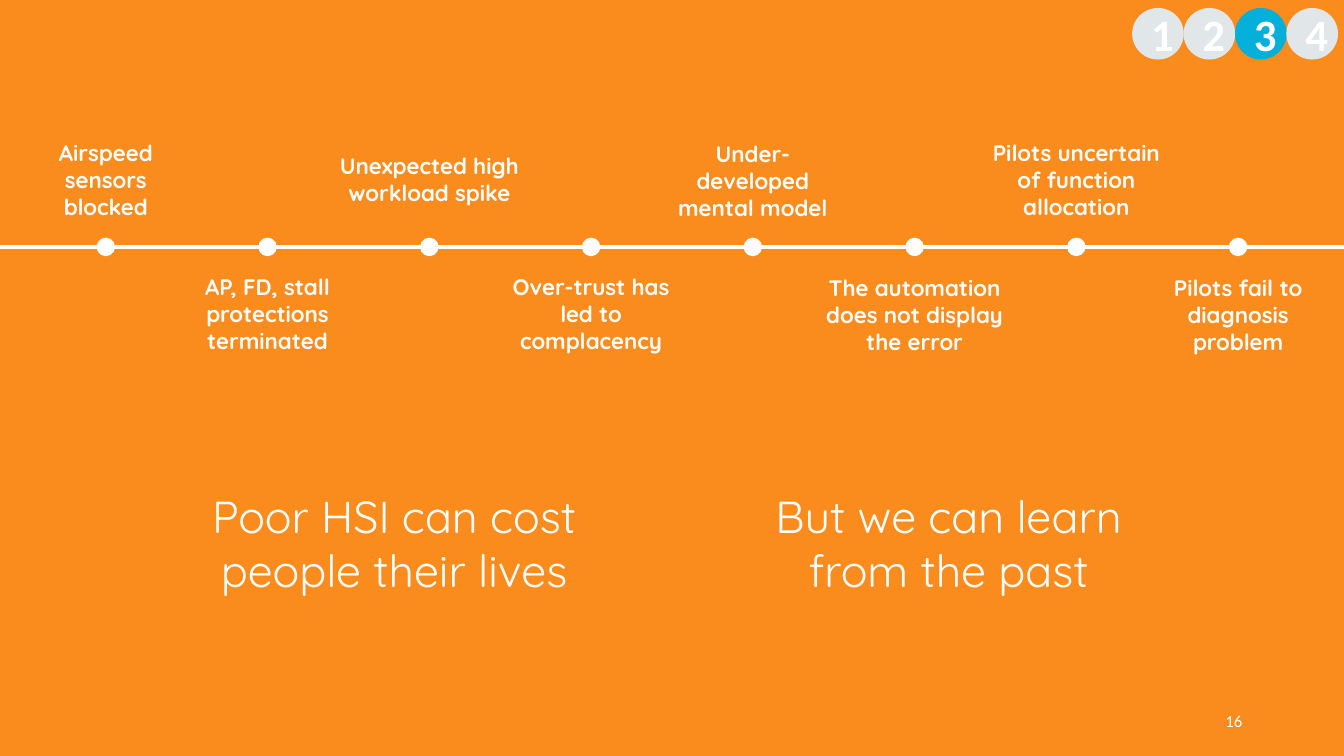
from dataclasses import dataclass

from lxml import etree
from pptx import Presentation
from pptx.dml.color import RGBColor
from pptx.enum.shapes import MSO_CONNECTOR, MSO_SHAPE
from pptx.enum.text import MSO_ANCHOR, PP_ALIGN
from pptx.oxml.ns import qn
from pptx.util import Inches, Pt

OVAL = MSO_SHAPE.OVAL
STRAIGHT = MSO_CONNECTOR.STRAIGHT
MIDDLE = MSO_ANCHOR.MIDDLE
CENTER, RIGHT = PP_ALIGN.CENTER, PP_ALIGN.RIGHT

SLIDE_W, SLIDE_H = 13.33, 7.5
ORANGE, WHITE, GREY, BLUE = "FA8B1D", "FFFFFF", "E1E6E9", "04AFD9"
HEADING_FONT, NUMBER_FONT = "Quicksand", "Calibri"

# Timeline grid: evenly spaced columns, one row above and one below the axis
FIRST_X, LAST_X = 1.05, 12.28
AXIS_Y = 2.45
LABEL_W, LABEL_H = 2, 0.92
ABOVE_Y, BELOW_Y = 1.32, 2.65
DOT_SIZE = 0.17

# Section tracker and closing messages
STEP_X, STEP_Y, STEP_SIZE, STEP_PITCH = 11.25, 0.1, 0.47, 0.51
MESSAGE_X, MESSAGE_Y, MESSAGE_W, MESSAGE_H, MESSAGE_PITCH = 1.89, 4.36, 4.04, 2.04, 5.5


@dataclass(frozen=True)
class Box:
    left: float
    top: float
    width: float
    height: float

    def emu(self) -> tuple:
        return tuple(Inches(v) for v in (self.left, self.top, self.width, self.height))


@dataclass(frozen=True)
class Event:
    label: str
    nudge: float = 0


EVENTS = [
    Event("Airspeed sensors\nblocked"),
    Event("AP, FD, stall protections terminated"),
    Event("Unexpected high workload spike"),
    Event("Over-trust has led to complacency"),
    Event("Under- developed mental model", 0.01),
    Event("The automation does not display the error", 0.01),
    Event("Pilots uncertain of function allocation"),
    Event("Pilots fail to diagnosis problem", 0.01),
]
MESSAGES = ["Poor HSI can cost people their lives", "But we can learn from the past"]
SECTIONS = ["1", "2", "3", "4"]
CURRENT_SECTION = "3"


def rgb(value: str) -> RGBColor:
    return RGBColor.from_string(value)


def write(frame, text: str, *, size: float, font: str = HEADING_FONT,
          bold: bool = False, align=CENTER) -> None:
    frame.word_wrap = True
    frame.vertical_anchor = MIDDLE
    frame.text = text
    for paragraph in frame.paragraphs:
        paragraph.alignment = align
        paragraph.font.size = Pt(size)
        paragraph.font.name = font
        paragraph.font.bold = bold
        paragraph.font.color.rgb = rgb(WHITE)


def add_text(slide, box: Box, text: str, **style) -> None:
    write(slide.shapes.add_textbox(*box.emu()).text_frame, text, **style)


def add_circle(slide, box: Box, color: str, outline: float):
    circle = slide.shapes.add_shape(OVAL, *box.emu())
    circle.shadow.inherit = False
    circle.fill.solid()
    circle.fill.fore_color.rgb = rgb(color)
    circle.line.color.rgb = rgb(color)
    circle.line.width = Pt(outline)
    return circle


def add_axis(slide) -> None:
    y = Inches(AXIS_Y)
    axis = slide.shapes.add_connector(STRAIGHT, 0, y, Inches(SLIDE_W), y)
    axis.line.color.rgb = rgb(WHITE)
    axis.line.width = Pt(3)
    etree.SubElement(axis._element.spPr, qn("a:effectLst"))


def add_timeline(slide) -> None:
    add_axis(slide)
    pitch = (LAST_X - FIRST_X) / (len(EVENTS) - 1)
    for column, event in enumerate(EVENTS):
        x = FIRST_X + column * pitch
        row_y = (BELOW_Y if column % 2 else ABOVE_Y) + event.nudge
        dot = Box(x - DOT_SIZE / 2, AXIS_Y - DOT_SIZE / 2, DOT_SIZE, DOT_SIZE)
        add_circle(slide, dot, WHITE, 1)
        add_text(slide, Box(x - LABEL_W / 2, row_y, LABEL_W, LABEL_H),
                 event.label, size=16, bold=True)


def add_section_tracker(slide) -> None:
    for i, section in enumerate(SECTIONS):
        box = Box(STEP_X + i * STEP_PITCH, STEP_Y, STEP_SIZE, STEP_SIZE)
        color = BLUE if section == CURRENT_SECTION else GREY
        circle = add_circle(slide, box, color, 3)
        write(circle.text_frame, section, size=32, font=NUMBER_FONT, bold=True)


def main() -> None:
    deck = Presentation()
    deck.slide_width, deck.slide_height = Inches(SLIDE_W), Inches(SLIDE_H)
    slide = deck.slides.add_slide(deck.slide_layouts.get_by_name("Blank"))
    slide.background.fill.solid()
    slide.background.fill.fore_color.rgb = rgb(ORANGE)

    # Closing messages
    for i, message in enumerate(MESSAGES):
        box = Box(MESSAGE_X + i * MESSAGE_PITCH, MESSAGE_Y, MESSAGE_W, MESSAGE_H)
        add_text(slide, box, message, size=32)

    add_section_tracker(slide)
    add_timeline(slide)

    # Page number
    add_text(slide, Box(9.42, 6.95, 3, 0.4), "16", size=12, font=NUMBER_FONT, align=RIGHT)
    deck.save("out.pptx")


if __name__ == "__main__":
    main()
